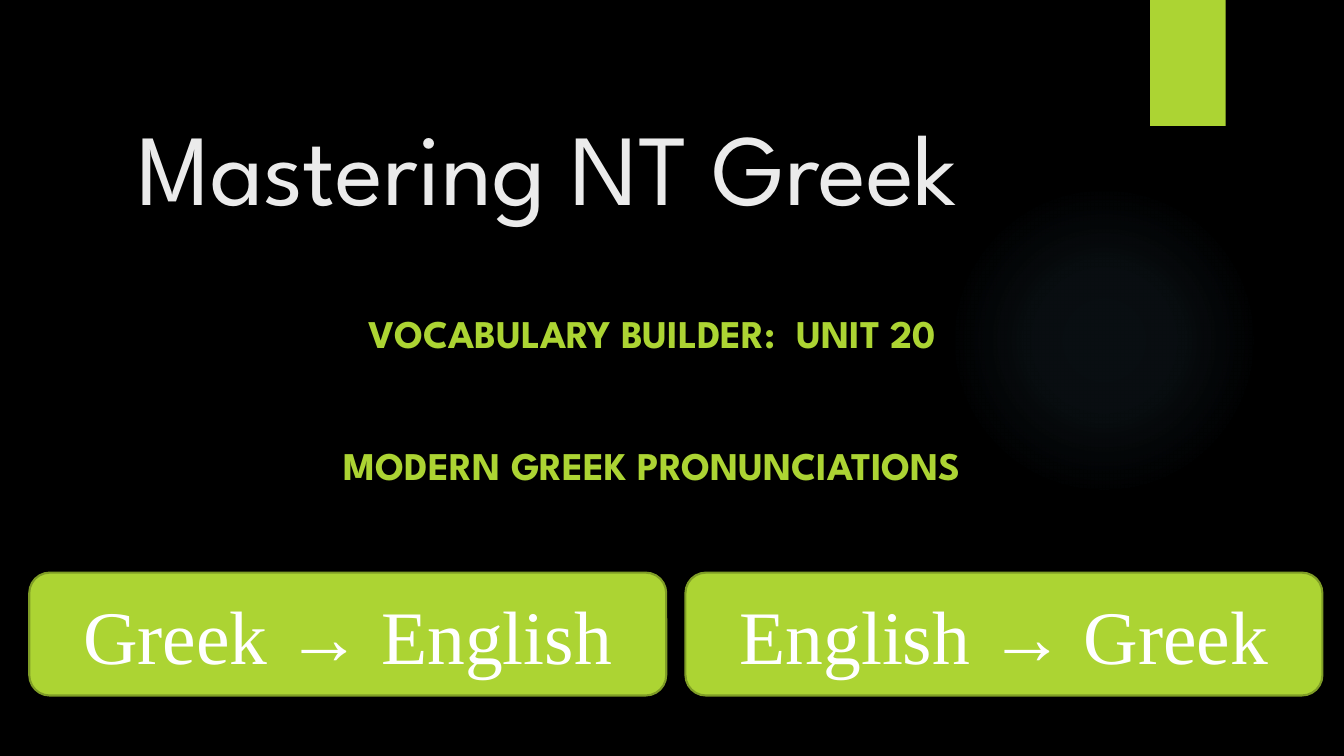
from lxml import etree
from pptx import Presentation
from pptx.dml.color import RGBColor
from pptx.enum.shapes import MSO_SHAPE as SHAPE
from pptx.enum.text import MSO_ANCHOR as ANCHOR, MSO_AUTO_SIZE as AUTO, PP_ALIGN as ALIGN
from pptx.oxml import parse_xml
from pptx.oxml.ns import nsdecls, qn
from pptx.util import Pt


def rgb(hex_color):
    return RGBColor.from_string(hex_color)


class Deck:
    """Hold the style and the current slide, and add each kind of element."""

    LIME, OLIVE, SKY = "ACD433", "7F9D26", "7AC4F0"
    BLACK, WHITE, PALE = "000000", "FFFFFF", "EBEBEB"
    SANS, SERIF = "League Spartan", "Times New Roman"

    def __init__(self, width, height):
        self.prs = Presentation()
        self.prs.slide_width, self.prs.slide_height = Pt(width), Pt(height)

    def new_slide(self):
        self.s = self.prs.slides.add_slide(self.prs.slide_layouts[5])
        bg = self.s.background.fill
        bg.solid()
        bg.fore_color.rgb = rgb(self.BLACK)

    def add_text(self, p, text, size, font, color, bold=False, align=ALIGN.CENTER):
        p.alignment = align
        r = p.add_run()
        r.text = text
        r.font.size, r.font.name, r.font.bold = Pt(size), font, bold
        r.font.color.rgb = rgb(color)

    def title(self, text, x, y, w, h):
        sp = self.s.shapes.title
        sp.left, sp.top, sp.width, sp.height = map(Pt, (x, y, w, h))
        tf = sp.text_frame
        tf.auto_size, tf.vertical_anchor = AUTO.NONE, ANCHOR.BOTTOM
        self.add_text(tf.paragraphs[0], text, 72, self.SANS, self.PALE, align=ALIGN.LEFT)

    def subtitle(self, lines, x, y, w, h, gap):
        tf = self.s.shapes.add_textbox(*map(Pt, (x, y, w, h))).text_frame
        tf.word_wrap = True
        for i, line in enumerate(lines):
            p = tf.add_paragraph() if i else tf.paragraphs[0]
            p.space_before = Pt(gap if i else 0)
            self.add_text(p, line, 28, self.SANS, self.LIME, bold=True)

    def shape(self, kind, x, y, w, h, fill=None, line=None):
        sp = self.s.shapes.add_shape(kind, *map(Pt, (x, y, w, h)))
        sp.shadow.inherit = False
        if fill:
            sp.fill.solid()
            sp.fill.fore_color.rgb = rgb(fill)
        if line:
            sp.line.color.rgb = rgb(line)
            sp.line.width = Pt(1.5)
        else:
            sp.line.fill.background()
        return sp

    def glow(self, x, y, size, stops):
        sp = self.shape(SHAPE.OVAL, x, y, size, size)
        grad = parse_xml(f'<a:gradFill {nsdecls("a")}><a:gsLst/><a:path path="circle">'
                         '<a:fillToRect l="50000" t="50000" r="50000" b="50000"/>'
                         '</a:path></a:gradFill>')
        for pos, alpha in stops:
            gs = etree.SubElement(grad[0], qn("a:gs"), pos=str(pos * 1000))
            clr = etree.SubElement(gs, qn("a:srgbClr"), val=self.SKY)
            etree.SubElement(clr, qn("a:alpha"), val=str(alpha * 1000))
        sp.element.spPr.find(qn("a:prstGeom")).addnext(grad)

    def button(self, text, x, y, w, h):
        sp = self.shape(SHAPE.ROUNDED_RECTANGLE, x, y, w, h, self.LIME, self.OLIVE)
        tf = sp.text_frame
        tf.word_wrap, tf.vertical_anchor = True, ANCHOR.MIDDLE
        self.add_text(tf.paragraphs[0], text, 54, self.SERIF, self.WHITE)


def main():
    deck = Deck(960, 540)
    deck.new_slide()
    deck.glow(677.5, 131.8, 221.8, [(0, 7), (36, 6), (69, 0)])
    deck.shape(SHAPE.RECTANGLE, 821.5, 0, 54, 90, deck.LIME)
    deck.title("Mastering NT Greek", 90.7, 50.4, 722.9, 114.5)
    deck.subtitle(["VOCABULARY BUILDER:  UNIT 20", "MODERN GREEK PRONUNCIATIONS"],
                  56.2, 217.4, 819.4, 183.7, gap=61)
    width, gap = 455, 13.7
    for i, label in enumerate(["Greek → English", "English → Greek"]):
        deck.button(label, 20.9 + i * (width + gap), 409, width, 87.8)
    deck.prs.save("out.pptx")


if __name__ == "__main__":
    main()
